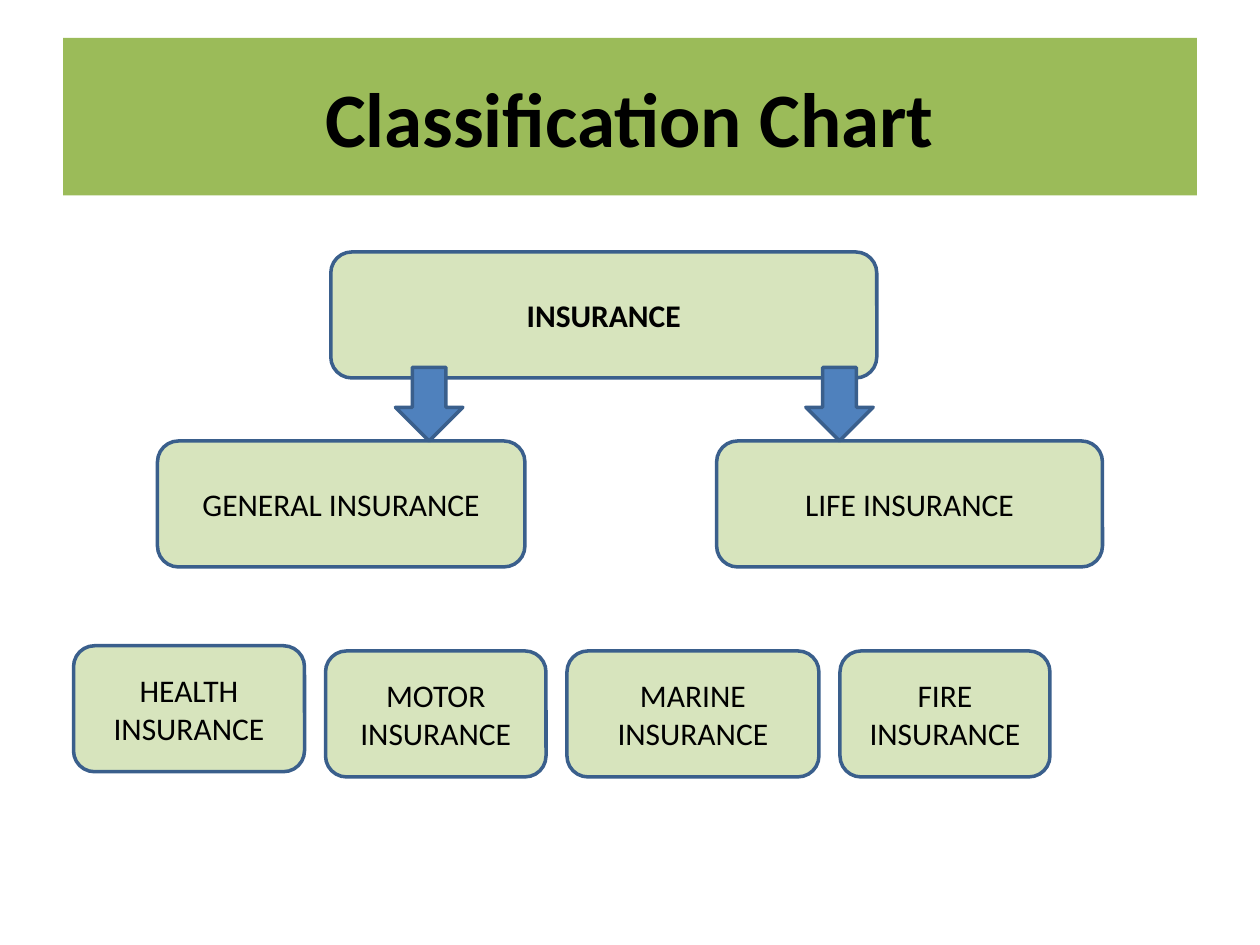
from pptx import Presentation
from pptx.dml.color import RGBColor
from pptx.enum.shapes import MSO_SHAPE as Shape
from pptx.enum.text import MSO_ANCHOR as Anchor, PP_ALIGN as Align
from pptx.util import Pt

GREEN = RGBColor(0x9B, 0xBB, 0x59)
PALE = RGBColor(0xD7, 0xE4, 0xBD)
BLUE = RGBColor(0x4F, 0x81, 0xBD)
NAVY = RGBColor(0x3A, 0x5F, 0x8C)
BLACK = RGBColor(0, 0, 0)


def write(shape, text, size=18, bold=False):
    frame = shape.text_frame
    frame.word_wrap = True
    frame.vertical_anchor = Anchor.MIDDLE
    para = frame.paragraphs[0]
    para.alignment = Align.CENTER
    run = para.add_run()
    run.text = text
    font = run.font
    font.name, font.size, font.bold = "Calibri", Pt(size), bold
    font.color.rgb = BLACK


def draw(kind, left, top, width, height, fill):
    shape = slide.shapes.add_shape(kind, Pt(left), Pt(top), Pt(width), Pt(height))
    shape.shadow.inherit = False
    shape.fill.solid()
    shape.fill.fore_color.rgb = fill
    shape.line.color.rgb = NAVY
    shape.line.width = Pt(2)
    return shape


deck = Presentation()
deck.slide_width, deck.slide_height = Pt(720), Pt(540)
slide = deck.slides.add_slide(deck.slide_layouts[5])

# Title band
title = slide.shapes.title
title.left, title.top, title.width, title.height = Pt(36), Pt(21.6), Pt(648), Pt(90)
title.fill.solid()
title.fill.fore_color.rgb = GREEN
write(title, "Classification Chart", size=44, bold=True)

# Insurance classes: text, left, top, width, bold
boxes = [
    ("INSURANCE", 189, 144, 312, True),
    ("GENERAL INSURANCE", 90, 252, 210, False),
    ("LIFE INSURANCE", 409.5, 252, 220.5, False),
    ("HEALTH INSURANCE", 42, 369, 132, False),
    ("MOTOR INSURANCE", 186, 372, 126, False),
    ("MARINE INSURANCE", 324, 372, 144, False),
    ("FIRE INSURANCE", 480, 372, 120, False),
]
for text, left, top, width, bold in boxes:
    box = draw(Shape.ROUNDED_RECTANGLE, left, top, width, 72, PALE)
    write(box, text, bold=bold)

# Arrows down to the two main classes
for left in (226, 460.5):
    draw(Shape.DOWN_ARROW, left, 210, 38.5, 42, BLUE)

deck.save("out.pptx")
